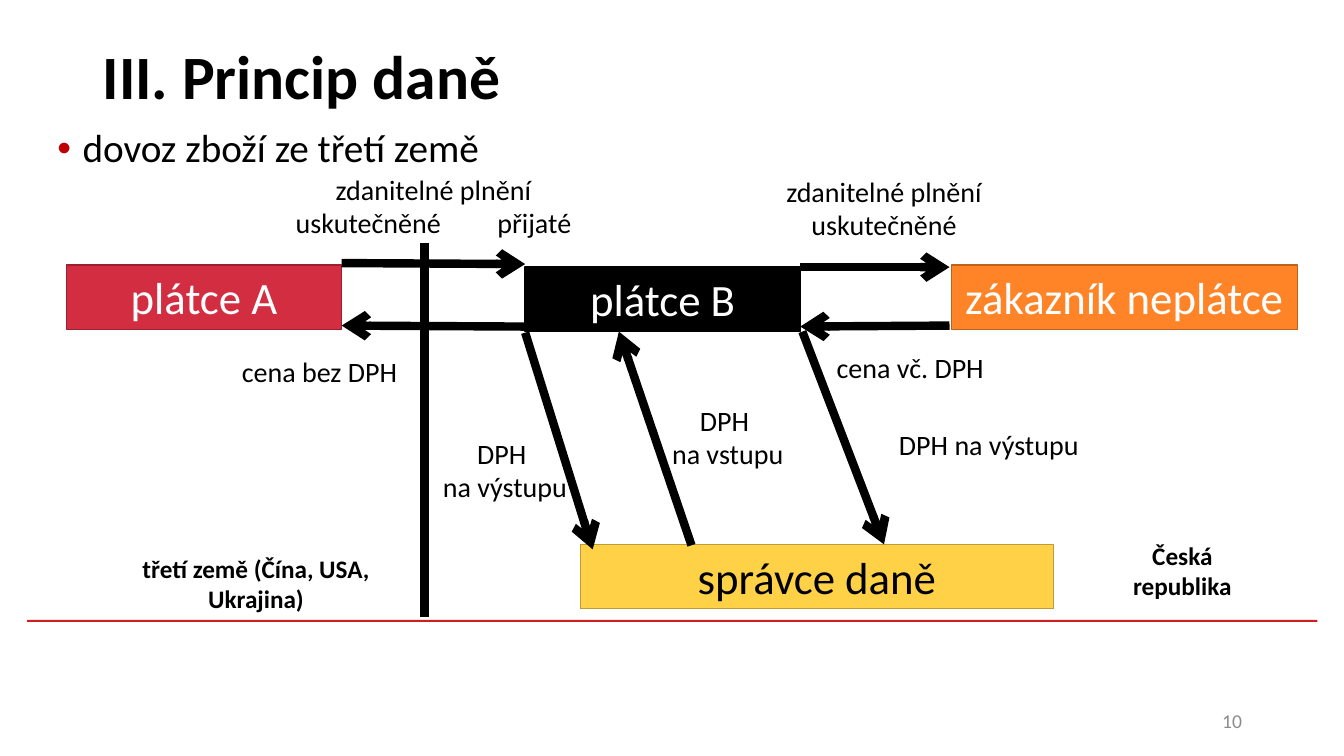
from collections import namedtuple

from lxml.etree import SubElement
from pptx import Presentation
from pptx.dml.color import RGBColor
from pptx.enum.shapes import MSO_CONNECTOR as Connector, MSO_SHAPE as Shape
from pptx.enum.text import MSO_ANCHOR as Anchor, PP_ALIGN as Align
from pptx.oxml.ns import qn
from pptx.util import Inches, Pt

WIDTH, HEIGHT = Inches(13.33), Inches(7.5)
COLUMNS, ROWS = 40, 30
BLACK, WHITE, RED, GREY = "000000", "FFFFFF", "CD1F21", "8C8C8C"

Box = namedtuple("Box", "left top width height")


def color(hex_string):
    return RGBColor.from_string(hex_string)


def x(columns):
    return round(WIDTH * columns / COLUMNS)


def y(rows):
    return round(HEIGHT * rows / ROWS)


def place(region, left, top, width, height):
    """Turn a position inside a region into lengths on the slide."""
    return x(region.left + left), y(region.top + top), x(width), y(height)


def write(shape, text, size, ink=BLACK, bold=False, align=Align.CENTER, anchor=Anchor.TOP):
    frame = shape.text_frame
    frame.word_wrap = True
    frame.vertical_anchor = anchor
    paragraph = frame.paragraphs[0]
    paragraph.text = text
    paragraph.alignment = align
    for run in paragraph.runs:
        for name, value in {"name": "Calibri", "size": Pt(size), "bold": bold}.items():
            setattr(run.font, name, value)
        run.font.color.rgb = color(ink)
    return paragraph


def add_label(slide, region, position, text, size, **style):
    return write(slide.shapes.add_textbox(*place(region, *position)), text, size, **style)


def add_rectangle(slide, region, position, fill, outline=None):
    shape = slide.shapes.add_shape(Shape.RECTANGLE, *place(region, *position))
    shape.shadow.inherit = False
    shape.fill.solid()
    shape.fill.fore_color.rgb = color(fill)
    if outline:
        shape.line.color.rgb = color(outline)
        shape.line.width = Pt(1)
    else:
        shape.line.fill.background()
    return shape


def add_line(slide, region, start, end, arrow=True):
    points = [place(region, *point, 0, 0)[:2] for point in (start, end)]
    line = slide.shapes.add_connector(Connector.STRAIGHT, *points[0], *points[1])
    line.line.color.rgb = color(BLACK)
    line.line.width = Pt(6)
    if arrow:
        SubElement(line.line._get_or_add_ln(), qn("a:tailEnd"), type="arrow")
    SubElement(line._element.spPr, qn("a:effectLst"))


def add_bullet(paragraph, hanging, hex_string):
    properties = paragraph._p.get_or_add_pPr()
    properties.set("marL", str(hanging))
    properties.set("indent", str(-hanging))
    bullet_color = SubElement(properties, qn("a:buClr"))
    SubElement(bullet_color, qn("a:srgbClr"), val=hex_string)
    SubElement(properties, qn("a:buFont"), typeface="Arial")
    SubElement(properties, qn("a:buChar"), char="•")


def draw_heading(slide, region):
    add_label(slide, region, (2.76, 0.08, 34.5, 5.8), "III. Princip daně", 44,
              bold=True, align=Align.LEFT, anchor=Anchor.MIDDLE)
    topic = add_label(slide, region, (1.41, 4.92, 37.17, 2.84),
                      "dovoz zboží ze třetí země", 28, align=Align.LEFT)
    add_bullet(topic, Inches(0.25), "C00000")
    topic.line_spacing = 0.9


def draw_parties(slide, region):
    parties = [
        ("plátce A", 1.98, 4.52, 8.19, "D22D40", "9B212F", WHITE),
        ("plátce B", 15.63, 4.6, 8.19, BLACK, BLACK, WHITE),
        ("zákazník neplátce", 28.32, 4.52, 10.29, "FF8427", "BD621D", WHITE),
        ("správce daně", 17.28, 15.6, 14.07, "FFD147", "BD9B35", BLACK),
    ]
    for text, left, top, width, fill, outline, ink in parties:
        shape = add_rectangle(slide, region, (left, top, width, 2.56), fill, outline)
        write(shape, text, 32, ink=ink)


def draw_flows(slide, region):
    payer_a, payer_b, payer_b_end, customer = 10.17, 15.63, 23.82, 28.26
    arrows = [
        ((payer_a, 4.44), (payer_b, 4.48)),
        ((payer_b, 6.96), (payer_a, 6.92)),
        ((payer_b_end, 4.6), (customer, 4.6)),
        ((customer, 6.92), (payer_b_end, 6.96)),
        ((23.88, 7.16), (26.31, 15.6)),
        ((20.58, 15.64), (18.42, 7.16)),
        ((payer_b, 7.2), (17.64, 15.8)),
    ]
    for start, end in arrows:
        add_line(slide, region, start, end)
    border = 12.63
    add_line(slide, region, (border, 3.64), (border, 18.48), arrow=False)


def draw_labels(slide, region):
    flows = [
        ("zdanitelné plnění\nuskutečněné \tpřijaté", 7.38, 0.64, 11.04),
        ("zdanitelné plnění\nuskutečněné", 20.79, 0.72, 11.04),
        ("cena bez DPH", 5.25, 7.88, 8.52),
        ("cena vč. DPH", 22.83, 7.72, 8.52),
        ("DPH \nna výstupu", 12.15, 11.12, 5.76),
        ("DPH \nna vstupu", 19.29, 9.8, 4.74),
        ("DPH na výstupu", 25.17, 10.76, 8.52),
    ]
    for text, left, top, width in flows:
        height = 3.08 if "\n" in text else 1.76
        add_label(slide, region, (left, top, width, height), text, 20)
    territories = [
        ("třetí země (Čína, USA, Ukrajina)", 3.75, 15.76, 7.74),
        ("Česká republika", 32.58, 15.24, 5.22),
    ]
    for text, left, top, width in territories:
        add_label(slide, region, (left, top, width, 2.84), text, 18, bold=True)


def draw_footer(slide, region):
    add_rectangle(slide, region, (0.81, 0.6, 38.4, 0.08), RED)
    add_label(slide, region, (28.26, 3.8, 9, 1.6), "10", 14,
              ink=GREY, align=Align.RIGHT, anchor=Anchor.MIDDLE)


def main():
    presentation = Presentation()
    presentation.slide_width, presentation.slide_height = WIDTH, HEIGHT
    slide = presentation.slides.add_slide(presentation.slide_layouts[6])
    diagram = Box(0, 6, COLUMNS, 18)
    draw_footer(slide, Box(0, 24, COLUMNS, 6))
    draw_heading(slide, Box(0, 0, COLUMNS, 8))
    draw_parties(slide, diagram)
    draw_labels(slide, diagram)
    draw_flows(slide, diagram)
    presentation.save("out.pptx")


if __name__ == "__main__":
    main()
